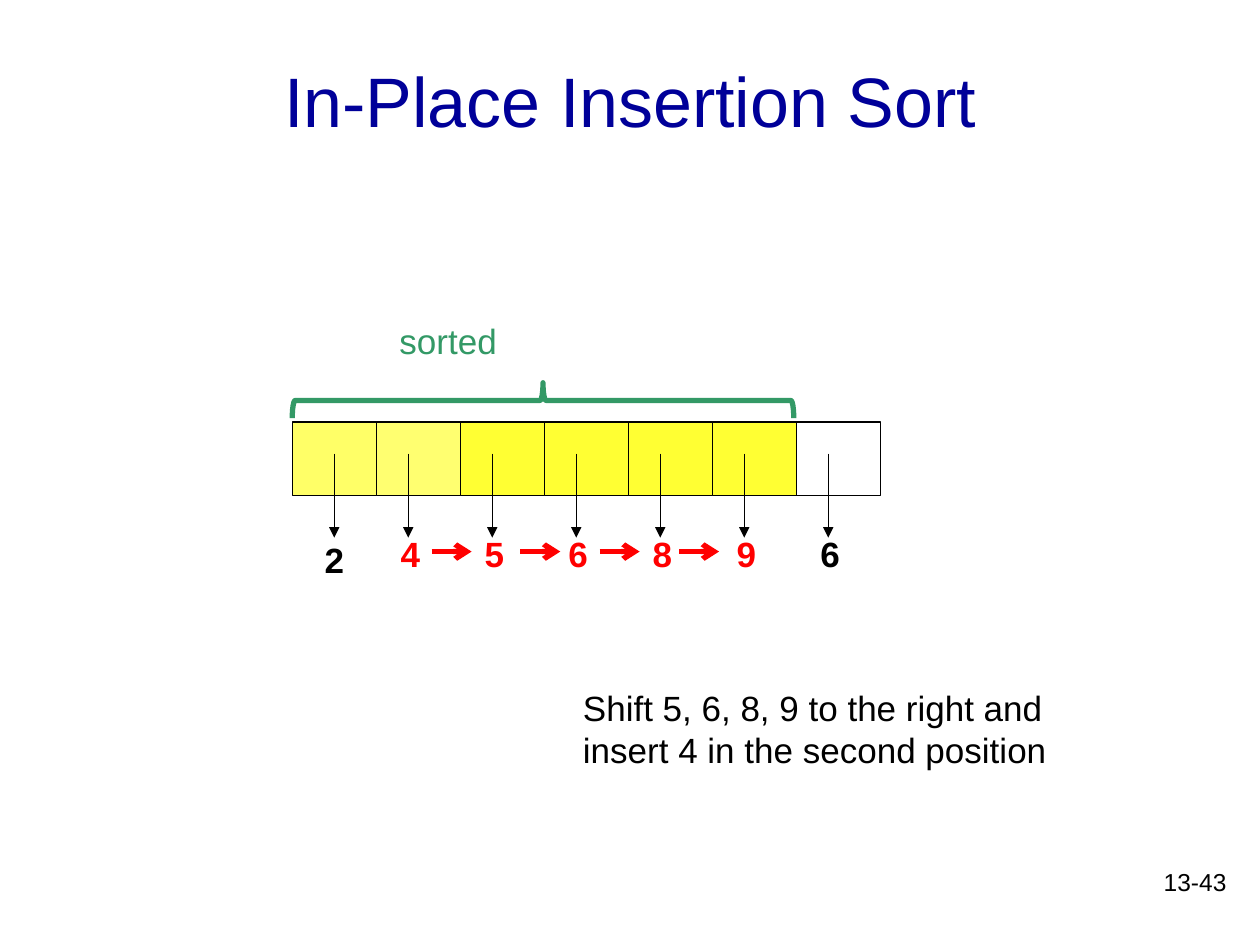
from lxml.etree import SubElement
from pptx import Presentation
from pptx.dml.color import RGBColor
from pptx.enum.shapes import MSO_CONNECTOR, MSO_SHAPE
from pptx.enum.text import MSO_ANCHOR, MSO_AUTO_SIZE, PP_ALIGN
from pptx.oxml.ns import qn
from pptx.util import Pt

BLACK, RED, GREEN, NAVY = "000000", "FF0000", "339966", "000099"


def add_text(box, wording, size, color, bold=False, align=PP_ALIGN.LEFT, wrap=True, grow=True):
    """Add a text box; box is left, top, width, height in points."""
    frame = slide.shapes.add_textbox(*map(Pt, box)).text_frame
    frame.word_wrap = wrap
    frame.auto_size = MSO_AUTO_SIZE.SHAPE_TO_FIT_TEXT if grow else MSO_AUTO_SIZE.NONE
    frame.text = wording
    for paragraph in frame.paragraphs:
        paragraph.alignment = align
        for run in paragraph.runs:
            run.font.name = "Arial"
            run.font.size = Pt(size)
            run.font.bold = bold
            run.font.color.rgb = RGBColor.from_string(color)
    return frame


def add_arrow(x1, y1, x2, y2, color, weight, head):
    arrow = slide.shapes.add_connector(MSO_CONNECTOR.STRAIGHT, Pt(x1), Pt(y1), Pt(x2), Pt(y2))
    arrow.line.color.rgb = RGBColor.from_string(color)
    arrow.line.width = Pt(weight)
    SubElement(arrow.line._get_or_add_ln(), qn("a:tailEnd"), type=head)
    SubElement(arrow._element.spPr, qn("a:effectLst"))


deck = Presentation()
deck.slide_width, deck.slide_height = Pt(720), Pt(540)
slide = deck.slides.add_slide(deck.slide_layouts[6])

add_text((558, 492, 150, 36), "13-43", 14, BLACK, align=PP_ALIGN.RIGHT, grow=False)
title = add_text((54, 12, 612, 90), "In-Place Insertion Sort", 40, NAVY,
                 align=PP_ALIGN.CENTER, grow=False)
title.vertical_anchor = MSO_ANCHOR.MIDDLE

# Array cells, each pointing down to its value
row_left, row_top, cell_width, cell_height = 167, 241.2, 48, 42
cells = [
    ("2", BLACK, "FFFF67"),
    ("4", RED, "FFFF70"),
    ("5", RED, "FFFF33"),
    ("6", RED, "FFFF33"),
    ("8", RED, "FFFF33"),
    ("9", RED, "FFFF33"),
    ("6", BLACK, None),
]
for i, (value, value_color, fill) in enumerate(cells):
    left = row_left + i * cell_width
    cell = slide.shapes.add_shape(MSO_SHAPE.RECTANGLE, Pt(left), Pt(row_top),
                                  Pt(cell_width), Pt(cell_height))
    cell.shadow.inherit = False
    cell.line.color.rgb = RGBColor.from_string(BLACK)
    cell.line.width = Pt(0.75)
    if fill:
        cell.fill.solid()
        cell.fill.fore_color.rgb = RGBColor.from_string(fill)
    else:
        cell.fill.background()

for i, (value, value_color, fill) in enumerate(cells):
    # The first pointer is centred in its cell; the others sit left of centre
    pointer_x = row_left + i * cell_width + (24 if i == 0 else 18.3)
    value_left = pointer_x - (12.5 if i == 0 else 11.5)
    value_top = 304 if i == 0 else 301
    add_arrow(pointer_x, 259.2, pointer_x, 307.2, BLACK, 0.75, "triangle")
    add_text((value_left, value_top, 30, 31), value, 20, value_color, bold=True)

for shift_x in (246.7, 297.4, 342.7, 388.1):
    add_arrow(shift_x, 315.2, shift_x + 22.8, 315.2, RED, 3, "arrow")

# Brace over the sorted part
brace = slide.shapes.add_shape(MSO_SHAPE.RIGHT_BRACE, Pt(300.2), Pt(85.5), Pt(20.2), Pt(286.6))
brace.rotation = 270
brace.shadow.inherit = False
brace.fill.background()
brace.line.color.rgb = RGBColor.from_string(GREEN)
brace.line.width = Pt(3)
add_text((221.2, 179.2, 70.5, 31.5), "sorted", 20, GREEN, wrap=False)

add_text((326, 389, 281.5, 55.5),
         "Shift 5, 6, 8, 9 to the right and\ninsert 4 in the second position",
         20, BLACK, wrap=False)

deck.save("out.pptx")
